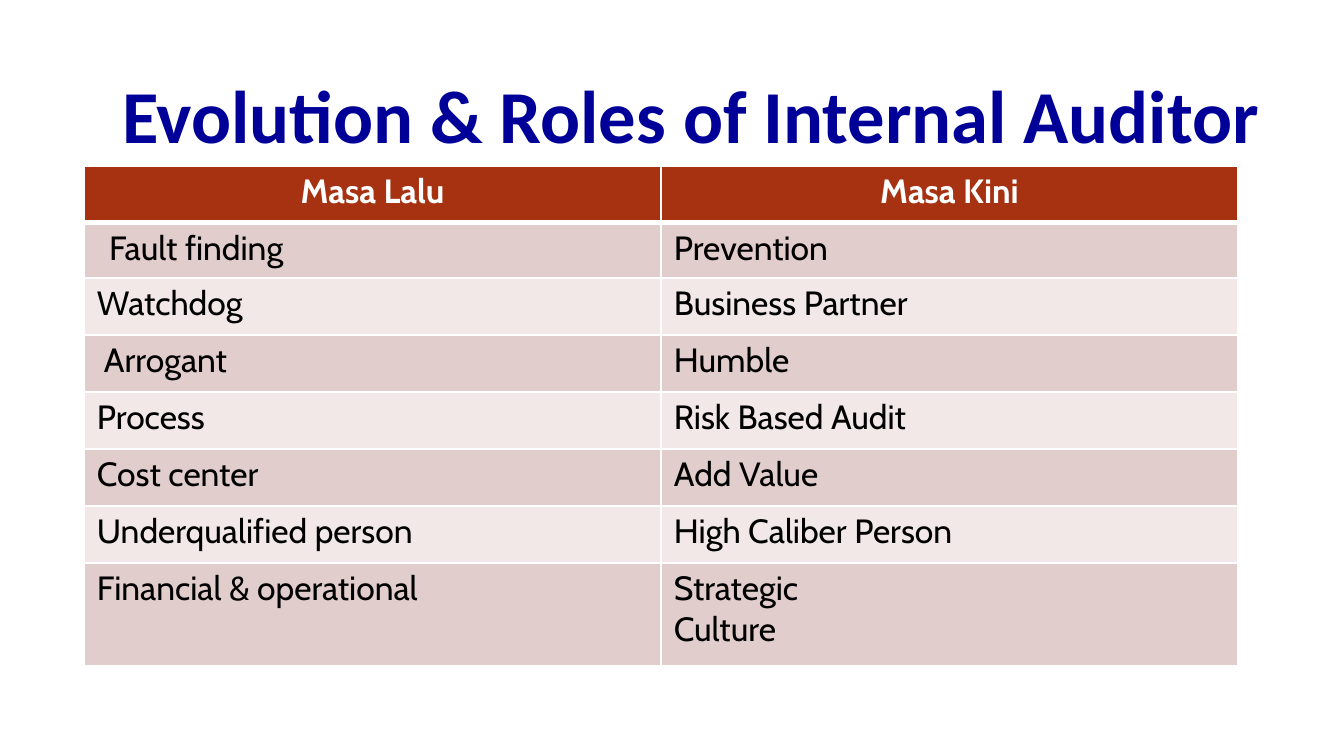
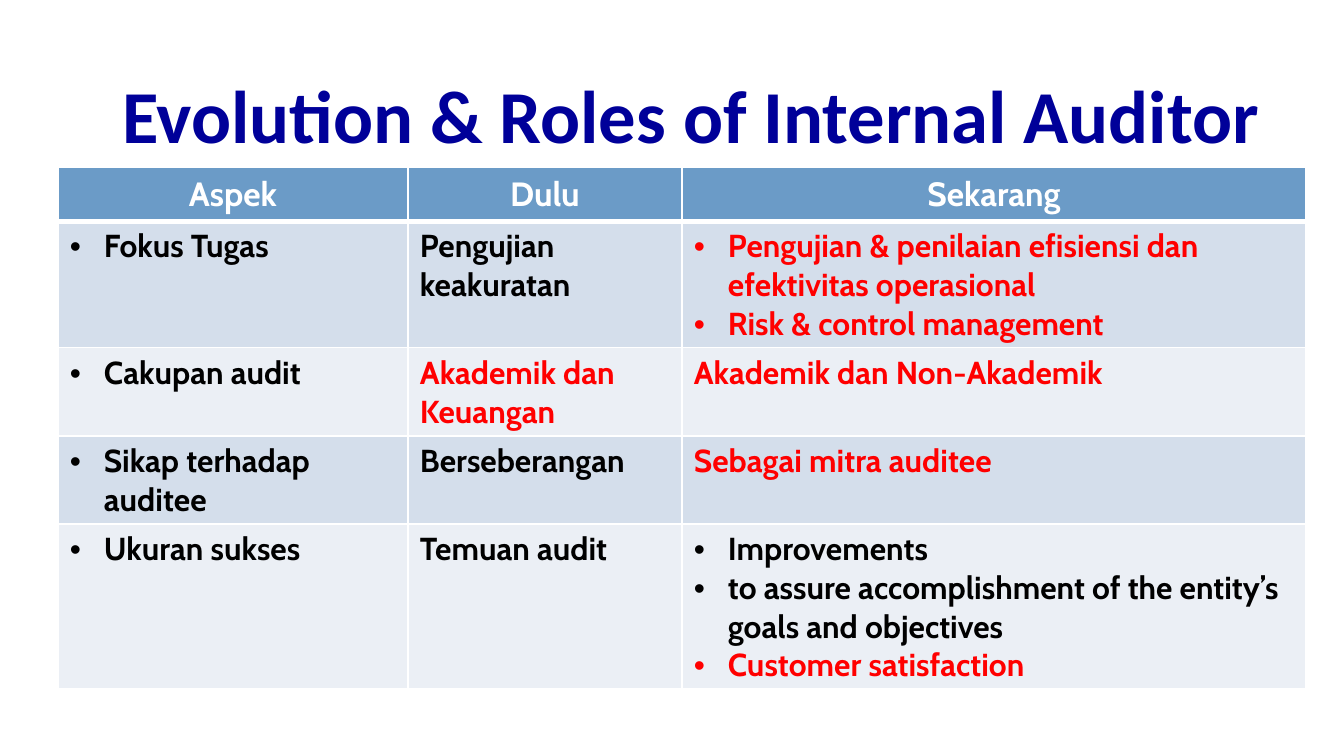
from dataclasses import dataclass

from lxml.etree import SubElement
from pptx import Presentation
from pptx.dml.color import RGBColor
from pptx.enum.text import MSO_ANCHOR, PP_ALIGN
from pptx.oxml.ns import qn
from pptx.util import Pt

EMU_PER_PX = 914400 / 134.4
TITLE = "Evolution & Roles of Internal Auditor"
TITLE_BOX = (81, 20, 1220, 187)
NAVY, WHITE, BLACK, RED = "000099", "FFFFFF", "000000", "FF0000"
TITLE_FONT, TABLE_FONT = "Calibri", "Cabin"
HEADER_SIZE = 18
BULLET_INDENT = 34


@dataclass
class Line:
    text: str
    color: str = BLACK
    bullet: bool = False
    indent: int = 0


@dataclass
class TableLook:
    header: str
    bands: tuple
    size: int
    bold: bool
    header_margins: tuple
    body_margins: tuple


RUST_LOOK = TableLook("A63212", ("E1CECC", "F1E8E7"), 18, False, (13, 5), (13, 5))
BLUE_LOOK = TableLook("6B9BC7", ("D4DEEB", "EBEFF5"), 17, True, (13, 7), (12, 6))

PAST_PRESENT_HEADER = ["Masa Lalu", "Masa Kini"]
PAST_PRESENT = [
    [[Line("Fault finding", indent=12)], [Line("Prevention")]],
    [[Line("Watchdog")], [Line("Business Partner")]],
    [[Line("Arrogant", indent=7)], [Line("Humble")]],
    [[Line("Process")], [Line("Risk Based Audit")]],
    [[Line("Cost center")], [Line("Add Value")]],
    [[Line("Underqualified person")], [Line("High Caliber Person")]],
    [[Line("Financial & operational")], [Line("Strategic"), Line("Culture")]],
]

ASPECTS_HEADER = ["Aspek", "Dulu", "Sekarang"]
ASPECTS = [
    [
        [Line("Fokus Tugas", bullet=True)],
        [Line("Pengujian keakuratan")],
        [
            Line("Pengujian & penilaian efisiensi dan efektivitas operasional", RED, True),
            Line("Risk & control management", RED, True),
        ],
    ],
    [
        [Line("Cakupan audit", bullet=True)],
        [Line("Akademik dan Keuangan", RED)],
        [Line("Akademik dan Non-Akademik", RED)],
    ],
    [
        [Line("Sikap terhadap auditee", bullet=True)],
        [Line("Berseberangan")],
        [Line("Sebagai mitra auditee", RED)],
    ],
    [
        [Line("Ukuran sukses", bullet=True)],
        [Line("Temuan audit")],
        [
            Line("Improvements", bullet=True),
            Line("to assure accomplishment of the entity’s goals and objectives", bullet=True),
            Line("Customer satisfaction", RED, True),
        ],
    ],
]


def px(length):
    return round(length * EMU_PER_PX)


def rgb(color):
    return RGBColor.from_string(color)


def style_paragraph(paragraph, face, size, color, bold, align=PP_ALIGN.LEFT):
    paragraph.alignment = align
    font = paragraph.font
    font.name, font.size, font.bold = face, Pt(size), bold
    font.color.rgb = rgb(color)


def indent_paragraph(paragraph, line):
    properties = paragraph._p.get_or_add_pPr()
    if line.bullet:
        properties.set("marL", str(px(BULLET_INDENT)))
        properties.set("indent", str(-px(BULLET_INDENT)))
        SubElement(properties, qn("a:buFont"), typeface="Arial")
        SubElement(properties, qn("a:buChar"), char="•")
    elif line.indent:
        properties.set("marL", str(px(line.indent)))
        properties.set("indent", "0")


def draw_borders(cell, top, bottom):
    properties = cell._tc.get_or_add_tcPr()
    for side, width in (("L", 1), ("R", 1), ("T", top), ("B", bottom)):
        border = SubElement(properties, qn(f"a:ln{side}"), w=str(Pt(width)))
        fill = SubElement(border, qn("a:solidFill"))
        SubElement(fill, qn("a:srgbClr"), val=WHITE)


def fill_cell(cell, lines, background, margins, borders, size, bold, align):
    draw_borders(cell, *borders)
    cell.fill.solid()
    cell.fill.fore_color.rgb = rgb(background)
    cell.margin_left = cell.margin_right = px(margins[0])
    cell.margin_top = cell.margin_bottom = px(margins[1])
    cell.vertical_anchor = MSO_ANCHOR.TOP
    frame = cell.text_frame
    for index, line in enumerate(lines):
        paragraph = frame.add_paragraph() if index else frame.paragraphs[0]
        paragraph.text = line.text
        indent_paragraph(paragraph, line)
        style_paragraph(paragraph, TABLE_FONT, size, line.color, bold, align)


def add_title(slide, box):
    frame = slide.shapes.add_textbox(*map(px, box)).text_frame
    frame.word_wrap = True
    frame.vertical_anchor = MSO_ANCHOR.MIDDLE
    frame.paragraphs[0].text = TITLE
    style_paragraph(frame.paragraphs[0], TITLE_FONT, 40, NAVY, True, PP_ALIGN.CENTER)


def add_comparison(slide, origin, widths, heights, header, body, look):
    box = (*origin, sum(widths), sum(heights))
    table = slide.shapes.add_table(len(heights), len(widths), *map(px, box)).table
    table.horz_banding = False
    for column, width in zip(table.columns, widths):
        column.width = px(width)
    for row, height in zip(table.rows, heights):
        row.height = px(height)
    for column, heading in enumerate(header):
        fill_cell(table.cell(0, column), [Line(heading, WHITE)], look.header,
                  look.header_margins, (1, 3), HEADER_SIZE, True, PP_ALIGN.CENTER)
    for row, entries in enumerate(body):
        borders = (1 if row else 3, 1)
        for column, lines in enumerate(entries):
            fill_cell(table.cell(row + 1, column), lines, look.bands[row % 2],
                      look.body_margins, borders, look.size, look.bold, PP_ALIGN.LEFT)


def add_slide(presentation, *comparison):
    slide = presentation.slides.add_slide(presentation.slide_layouts[6])
    add_title(slide, TITLE_BOX)
    add_comparison(slide, *comparison)


def main():
    presentation = Presentation()
    presentation.slide_width, presentation.slide_height = px(1344), px(756)
    add_slide(presentation, (84, 166), [577] * 2, [57, 55, *[57] * 5, 103],
              PAST_PRESENT_HEADER, PAST_PRESENT, RUST_LOOK)
    add_slide(presentation, (58, 167), [350, 274, 624], [54, 126, 87, 87, 165],
              ASPECTS_HEADER, ASPECTS, BLUE_LOOK)
    presentation.save("out.pptx")


if __name__ == "__main__":
    main()
